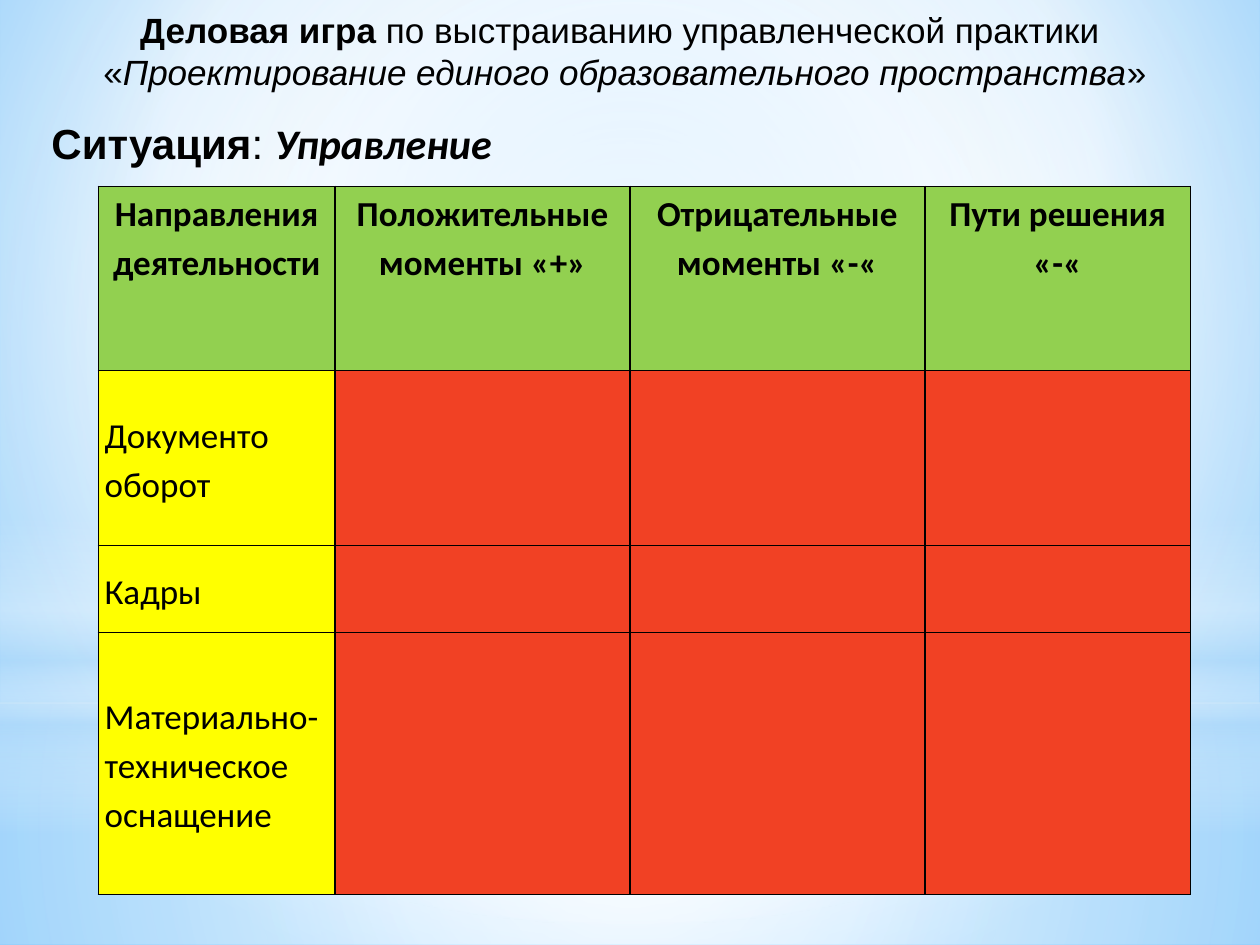
from lxml import etree
from pptx import Presentation
from pptx.dml.color import RGBColor
from pptx.enum.shapes import MSO_SHAPE as Shape
from pptx.enum.text import MSO_ANCHOR as Anchor, PP_ALIGN as Align
from pptx.oxml.ns import qn
from pptx.util import Inches, Pt

COLORS = {
    "text": "000000", "border": "000000",
    "header": "92D050", "direction": "FFFF00", "answer": "F14124",
    "white": "FFFFFF", "mist": "B4DCFA", "sky": "9ED5FF", "azure": "5BB9FF",
}


def set_gradient(element, stops, focus=None):
    solid = next(element.iter(qn("a:solidFill")))
    gradient = etree.Element(qn("a:gradFill"), rotWithShape="1")
    stop_list = etree.SubElement(gradient, qn("a:gsLst"))
    for position, color, opacity in stops:
        stop = etree.SubElement(stop_list, qn("a:gs"), pos=str(position * 1000))
        rgb = etree.SubElement(stop, qn("a:srgbClr"), val=COLORS[color])
        if opacity < 100:
            etree.SubElement(rgb, qn("a:alpha"), val=str(opacity * 1000))
    if focus:
        circle = etree.SubElement(gradient, qn("a:path"), path="circle")
        edges = {side: str(share * 1000) for side, share in zip("ltrb", focus)}
        etree.SubElement(circle, qn("a:fillToRect"), **edges)
    else:
        etree.SubElement(gradient, qn("a:lin"), ang="5400000", scaled="0")
    solid.getparent().replace(solid, gradient)


def add_run(paragraph, text, size, font="Arial", bold=False, italic=False):
    run = paragraph.add_run()
    run.text = text
    run.font.size = Pt(size)
    run.font.name = font
    run.font.bold = bold
    run.font.italic = italic
    run.font.color.rgb = RGBColor.from_string(COLORS["text"])


deck = Presentation()
deck.slide_width, deck.slide_height = Inches(10), Inches(7.5)
slide = deck.slides.add_slide(deck.slide_layouts[6])

slide.background.fill.solid()
slide.background.fill.fore_color.rgb = RGBColor.from_string(COLORS["sky"])
set_gradient(slide._element,
             [(0, "sky", 100), (60, "white", 100), (100, "azure", 100)],
             (20, 10, 20, 60))

center = (50, 50, 50, 50)
glows = [
    (Shape.RECTANGLE, 5.58, 1.92, center,
     [(0, "white", 91), (37, "white", 76), (100, "mist", 79)]),
    (Shape.RECTANGLE, 0, 5.58, center,
     [(0, "white", 89), (48, "white", 62), (100, "mist", 79)]),
    (Shape.RECTANGLE, 4.12, 2.5, None,
     [(0, "white", 0), (29, "white", 30), (45, "mist", 40),
      (55, "white", 26), (65, "mist", 60), (100, "white", 0)]),
    (Shape.OVAL, 1.75, 5.58, center, [(0, "white", 100), (56, "white", 0)]),
]
for outline, top, height, focus, stops in glows:
    glow = slide.shapes.add_shape(outline, 0, Inches(top), Inches(10), Inches(height))
    glow.shadow.inherit = False
    glow.line.fill.background()
    glow.fill.solid()
    set_gradient(glow._element, stops, focus)

headings = [
    (-0.04, 0, 10, 1.08, Align.CENTER, 20, [
        [("Деловая игра", {"bold": True}),
         (" по выстраиванию управленческой практики ", {})],
        [("«", {}),
         ("Проектирование единого образовательного пространства", {"italic": True}),
         ("»", {})],
    ]),
    (0.31, 0.86, 8.98, 0.81, Align.LEFT, 24, [
        [("Ситуация", {"bold": True}), (": ", {}),
         ("Управление", {"font": "Calibri", "bold": True, "italic": True})],
    ]),
]
for left, top, width, height, align, size, lines in headings:
    heading = slide.shapes.add_textbox(
        Inches(left), Inches(top), Inches(width), Inches(height)).text_frame
    heading.word_wrap = True
    heading.vertical_anchor = Anchor.TOP
    heading.margin_top = Inches(0.07)
    for index, line in enumerate(lines):
        paragraph = heading.add_paragraph() if index else heading.paragraphs[0]
        paragraph.alignment = align
        for text, style in line:
            add_run(paragraph, text, size, **style)

columns = ["Направления деятельности", "Положительные моменты «+»",
           "Отрицательные моменты «-«", "Пути решения «-«"]
directions = ["Документо\nоборот", "Кадры", "Материально-техническое оснащение"]
entries = [columns] + [[direction, "", "", ""] for direction in directions]
column_widths = [1.88, 2.34, 2.34, 2.11]
row_heights = [1.46, 1.39, 0.69, 2.08]

table = slide.shapes.add_table(
    len(entries), len(columns), Inches(0.78), Inches(1.48),
    Inches(sum(column_widths)), Inches(sum(row_heights))).table
table.first_row = table.horz_banding = False
for column, width in zip(table.columns, column_widths):
    column.width = Inches(width)
for row, height in zip(table.rows, row_heights):
    row.height = Inches(height)

for r, entry in enumerate(entries):
    for c, text in enumerate(entry):
        cell = table.cell(r, c)
        role = "header" if r == 0 else "answer" if c else "direction"
        cell.fill.solid()
        cell.fill.fore_color.rgb = RGBColor.from_string(COLORS[role])
        cell.margin_left = cell.margin_right = Inches(0.05)
        cell.margin_top = cell.margin_bottom = 0
        cell.vertical_anchor = Anchor.TOP if r == 0 else Anchor.MIDDLE
        properties = cell._tc.get_or_add_tcPr()
        for order, side in enumerate("LRTB"):
            border = etree.Element(qn(f"a:ln{side}"), w=str(Pt(1)))
            paint = etree.SubElement(border, qn("a:solidFill"))
            etree.SubElement(paint, qn("a:srgbClr"), val=COLORS["border"])
            properties.insert(order, border)
        if not text:
            continue
        for index, line in enumerate(text.split("\n")):
            frame = cell.text_frame
            paragraph = frame.add_paragraph() if index else frame.paragraphs[0]
            paragraph.alignment = Align.CENTER if r == 0 else Align.LEFT
            paragraph.line_spacing = 1.15
            add_run(paragraph, line, 20, "Calibri", bold=r == 0)

deck.save("out.pptx")
